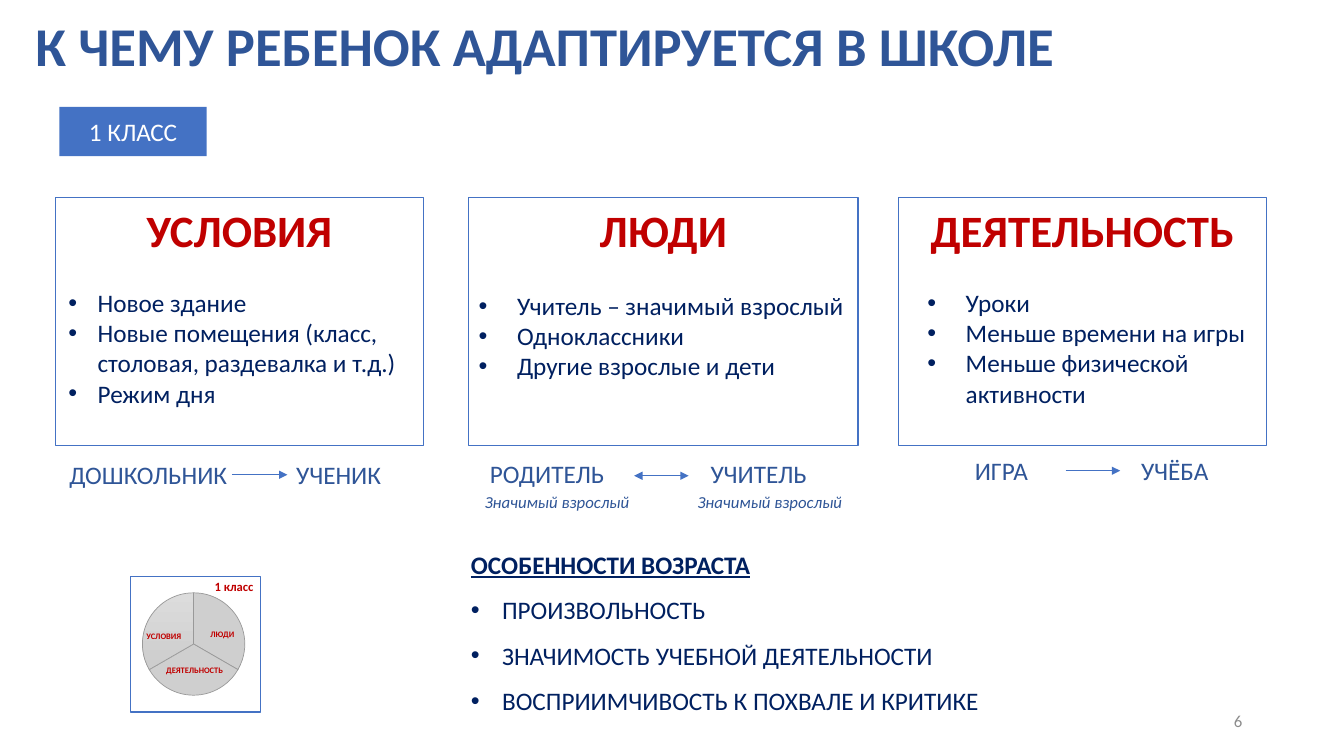
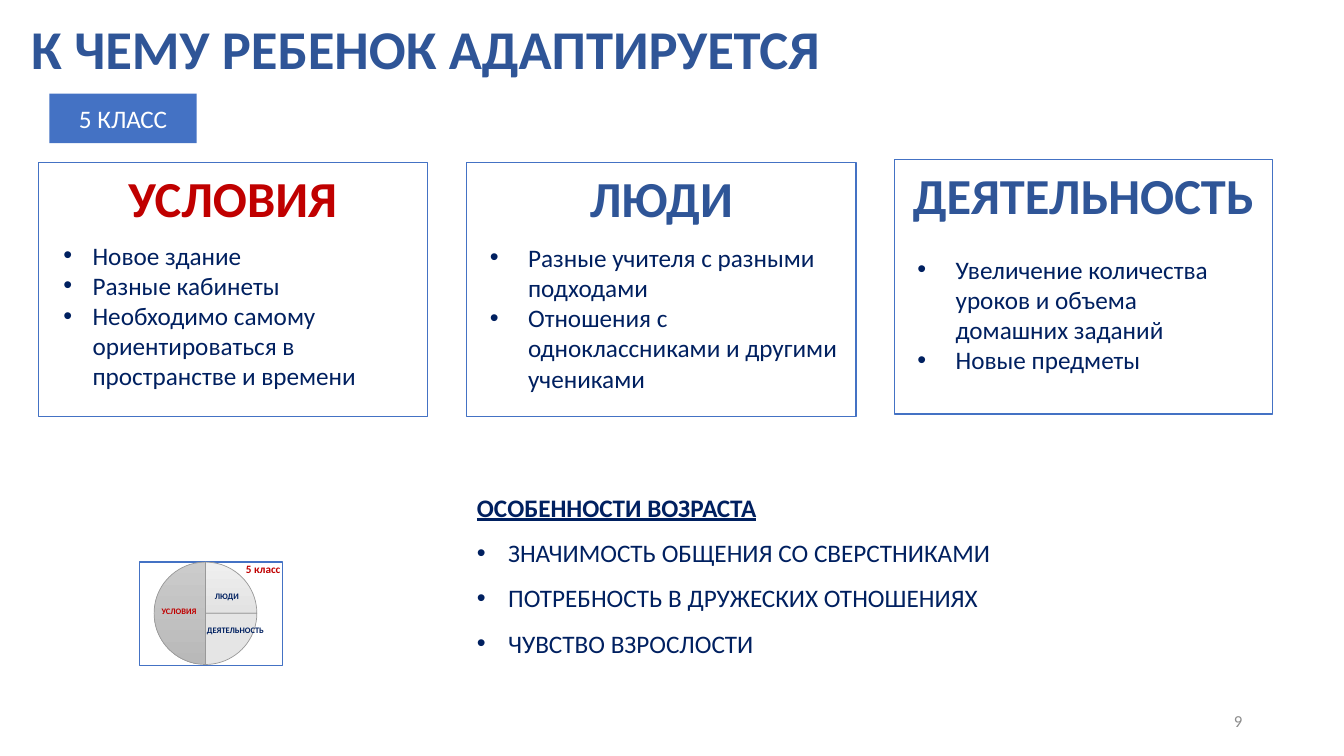
from lxml import etree
from pptx import Presentation
from pptx.chart.data import CategoryChartData
from pptx.dml.color import RGBColor
from pptx.enum.chart import XL_CHART_TYPE
from pptx.enum.shapes import MSO_CONNECTOR, MSO_SHAPE
from pptx.enum.text import MSO_ANCHOR, MSO_AUTO_SIZE, PP_ALIGN
from pptx.oxml import parse_xml
from pptx.oxml.ns import nsdecls, qn
from pptx.util import Inches, Pt

LEFT, CENTER, RIGHT = PP_ALIGN.LEFT, PP_ALIGN.CENTER, PP_ALIGN.RIGHT
TOP, MIDDLE = MSO_ANCHOR.TOP, MSO_ANCHOR.MIDDLE
RECT = MSO_SHAPE.RECTANGLE

FONT = "Calibri"
WHITE = RGBColor(0xFF, 0xFF, 0xFF)
BLACK = RGBColor(0x00, 0x00, 0x00)
BLUE = RGBColor(0x44, 0x72, 0xC4)
DARK_BLUE = RGBColor(0x2F, 0x55, 0x97)
NAVY = RGBColor(0x00, 0x20, 0x60)
RED = RGBColor(0xC0, 0x00, 0x00)
GRAY = RGBColor(0x8C, 0x8C, 0x8C)
SLICE_LINE = RGBColor(0x99, 0x99, 0x99)

# Boxes: left, top, width, height. Slices: colours at the top and the bottom.
# Labels: text, box, size, colour, alignment, bold, italic.
SLIDES = [
    {
        "title": ("К ЧЕМУ РЕБЕНОК АДАПТИРУЕТСЯ В ШКОЛЕ", (0.25, 0.14, 11.5, 0.7)),
        "grade": ("1 КЛАСС", 0.59, 1.06),
        "heading_size": 32,
        "panels": [
            ("УСЛОВИЯ", RED, (0.55, 1.96, 3.65, 2.46), (0.58, 2.8, 3.6, 1.62), 0.29,
             ["Новое здание",
              "Новые помещения (класс, столовая, раздевалка и т.д.)",
              "Режим дня"]),
            ("ЛЮДИ", RED, (4.65, 1.96, 3.86, 2.46), (4.65, 2.83, 3.86, 1.01), 0.38,
             ["Учитель – значимый взрослый", "Одноклассники",
              "Другие взрослые и дети"]),
            ("ДЕЯТЕЛЬНОСТЬ", RED, (8.91, 1.96, 3.65, 2.46), (9.1, 2.8, 3.45, 1.31), 0.38,
             ["Уроки", "Меньше времени на игры", "Меньше физической активности"]),
        ],
        "age": (4.57, 5.25, 7.65, 1.87),
        "age_items": ["ПРОИЗВОЛЬНОСТЬ", "ЗНАЧИМОСТЬ УЧЕБНОЙ ДЕЯТЕЛЬНОСТИ",
                      "ВОСПРИИМЧИВОСТЬ К ПОХВАЛЕ И КРИТИКЕ"],
        "pie": (1.29, 5.71, 1.3, 1.36),
        "plot": (0.09, 0, 0.79, 1),
        "values": (33, 33, 33),
        "slices": [("CFCFCF", "CFCFCF"), ("CFCFCF", "CFCFCF"), ("DCDCDC", "CDCDCD")],
        "arrows": [(2.3, 2.85, 4.71, False), (6.29, 6.83, 4.72, True),
                   (10.57, 11.11, 4.67, False)],
        "labels": [
            ("ДОШКОЛЬНИК", (0.59, 4.51, 1.9, 0.4), 18, DARK_BLUE, LEFT, False, False),
            ("УЧЕНИК", (2.84, 4.51, 1.4, 0.4), 18, DARK_BLUE, LEFT, False, False),
            ("РОДИТЕЛЬ", (4.76, 4.5, 1.6, 0.4), 18, DARK_BLUE, LEFT, False, False),
            ("УЧИТЕЛЬ", (6.95, 4.5, 1.6, 0.4), 18, DARK_BLUE, LEFT, False, False),
            ("ИГРА", (9.57, 4.47, 1, 0.4), 18, DARK_BLUE, LEFT, False, False),
            ("УЧЁБА", (11.22, 4.47, 1.2, 0.4), 18, DARK_BLUE, LEFT, False, False),
            ("Значимый взрослый", (4.71, 4.83, 1.9, 0.3), 12, DARK_BLUE, LEFT, False, True),
            ("Значимый взрослый", (6.82, 4.83, 1.9, 0.3), 12, DARK_BLUE, LEFT, False, True),
            ("ЛЮДИ", (1.88, 6.19, 0.65, 0.2), 6, RED, CENTER, True, False),
            ("УСЛОВИЯ", (1.11, 6.21, 1.03, 0.2), 6, RED, CENTER, True, False),
            ("ДЕЯТЕЛЬНОСТЬ", (1.28, 6.55, 1.3, 0.2), 6, RED, CENTER, True, False),
            ("1 класс", (2.03, 5.69, 0.69, 0.25), 9, RED, LEFT, True, False),
        ],
        "number": "6",
    },
    {
        "title": ("К ЧЕМУ РЕБЕНОК АДАПТИРУЕТСЯ", (0.21, 0.17, 11.91, 0.7)),
        "grade": ("5 КЛАСС", 0.49, 0.93),
        "heading_size": 36,
        "panels": [
            ("УСЛОВИЯ", RED, (0.38, 1.61, 3.86, 2.52), (0.53, 2.33, 3.6, 1.92), 0.29,
             ["Новое здание", "Разные кабинеты",
              "Необходимо самому ориентироваться в пространстве и времени"]),
            ("ЛЮДИ", DARK_BLUE, (4.63, 1.61, 3.86, 2.52), (4.76, 2.35, 3.86, 1.62), 0.38,
             ["Разные учителя с разными подходами",
              "Отношения с одноклассниками и другими учениками"]),
            ("ДЕЯТЕЛЬНОСТЬ", DARK_BLUE, (8.87, 1.58, 3.75, 2.53), (9, 2.47, 3.4, 1.31), 0.38,
             ["Увеличение количества уроков и объема домашних заданий",
              "Новые предметы"]),
        ],
        "age": (4.63, 4.68, 7.65, 1.87),
        "age_items": ["ЗНАЧИМОСТЬ ОБЩЕНИЯ СО СВЕРСТНИКАМИ",
                      "ПОТРЕБНОСТЬ В ДРУЖЕСКИХ ОТНОШЕНИЯХ", "ЧУВСТВО ВЗРОСЛОСТИ"],
        "pie": (1.38, 5.57, 1.43, 1.04),
        "plot": (0.09, 0, 0.74, 0.99),
        "values": (25, 25, 50),
        "slices": [("EFEFEF", "E3E3E3"), ("E5E5E5", "E5E5E5"), ("CBCBCB", "B9B9B9")],
        "arrows": [],
        "labels": [
            ("УСЛОВИЯ", (1.38, 5.96, 0.79, 0.2), 6, RED, CENTER, True, False),
            ("5 класс", (2.34, 5.53, 0.62, 0.24), 8, RED, LEFT, True, False),
            ("ДЕЯТЕЛЬНОСТЬ", (1.77, 6.15, 1.13, 0.2), 6, NAVY, CENTER, True, False),
            ("ЛЮДИ", (1.94, 5.82, 0.62, 0.2), 6, NAVY, CENTER, True, False),
        ],
        "number": "9",
    },
]


def add_text(p, text, size, color, align=LEFT, bold=False, italic=False):
    p.alignment = align
    r = p.add_run()
    r.text = text
    r.font.name, r.font.size = FONT, Pt(size)
    r.font.bold, r.font.italic = bold, italic
    r.font.color.rgb = color
    return r


def add_bullets(tf, items, indent, first=0):
    """Write bulleted items, starting at the paragraph with index first."""
    for i, item in enumerate(items, first):
        p = tf.paragraphs[0] if i == 0 else tf.add_paragraph()
        pPr = p._p.get_or_add_pPr()
        pPr.set("marL", str(Inches(indent)))
        pPr.set("indent", str(-Inches(indent)))
        etree.SubElement(pPr, qn("a:buFont"), typeface="Arial")
        etree.SubElement(pPr, qn("a:buChar"), char="•")
        p.space_before = Pt(0)
        add_text(p, item, 18, NAVY)


prs = Presentation()
prs.slide_width, prs.slide_height = Inches(13.33), Inches(7.5)

for page in SLIDES:
    s = prs.slides.add_slide(prs.slide_layouts[1])

    # Title
    text, box = page["title"]
    title = s.shapes.title
    title.left, title.top, title.width, title.height = map(Inches, box)
    tf = title.text_frame
    tf.auto_size = MSO_AUTO_SIZE.NONE
    tf.vertical_anchor = TOP
    tf.paragraphs[0].line_spacing = 0.9
    add_text(tf.paragraphs[0], text, 39, DARK_BLUE, bold=True)

    # Grade badge
    text, left, top = page["grade"]
    badge = s.shapes.add_shape(RECT, Inches(left), Inches(top), Inches(1.46), Inches(0.49))
    badge.shadow.inherit = False
    badge.fill.solid()
    badge.fill.fore_color.rgb = BLUE
    badge.line.fill.background()
    badge.text_frame.vertical_anchor = MIDDLE
    add_text(badge.text_frame.paragraphs[0], text, 18, WHITE, CENTER)

    # Three panels with lists
    for heading, color, box, list_box, indent, items in page["panels"]:
        panel = s.shapes.add_shape(RECT, *map(Inches, box))
        panel.shadow.inherit = False
        panel.fill.solid()
        panel.fill.fore_color.rgb = WHITE
        panel.line.color.rgb = BLUE
        panel.line.width = Pt(1)
        panel.text_frame.vertical_anchor = TOP
        add_text(panel.text_frame.paragraphs[0], heading, page["heading_size"],
                 color, CENTER, bold=True)
        tf = s.shapes.add_textbox(*map(Inches, list_box)).text_frame
        tf.word_wrap = True
        add_bullets(tf, items, indent)

    # Age features
    body = s.placeholders[1]
    body.left, body.top, body.width, body.height = map(Inches, page["age"])
    tf = body.text_frame
    tf.auto_size = MSO_AUTO_SIZE.NONE
    p = tf.paragraphs[0]
    pPr = p._p.get_or_add_pPr()
    pPr.set("marL", "0")
    pPr.set("indent", "0")
    etree.SubElement(pPr, qn("a:buNone"))
    p.space_before = Pt(0)
    add_text(p, "ОСОБЕННОСТИ ВОЗРАСТА", 18, NAVY, bold=True).font.underline = True
    add_bullets(tf, page["age_items"], 0.31, first=1)
    for p in tf.paragraphs:
        p.line_spacing = 1.5

    # Pie chart
    data = CategoryChartData()
    data.categories = ["1", "2", "3"]
    data.add_series("Series 1", page["values"])
    chart = s.shapes.add_chart(XL_CHART_TYPE.PIE, *map(Inches, page["pie"]), data).chart
    chart.has_title = chart.has_legend = False
    chart.font.name, chart.font.size = FONT, Pt(10)
    chart.font.color.rgb = BLACK
    chart.plots[0].vary_by_categories = False
    for i, (upper, lower) in enumerate(page["slices"]):
        fmt = chart.plots[0].series[0].points[i].format
        if upper == lower:
            fmt.fill.solid()
            fmt.fill.fore_color.rgb = RGBColor.from_string(upper)
        else:
            fmt.fill.gradient()
            fmt.fill.gradient_angle = 270
            for stop, shade in zip(fmt.fill.gradient_stops, (upper, lower)):
                stop.color.rgb = RGBColor.from_string(shade)
        fmt.line.color.rgb = SLICE_LINE
        fmt.line.width = Pt(0.5)
    c_chart = chart.element.find(qn("c:chart"))
    c_chart.addprevious(parse_xml(f'<c:roundedCorners {nsdecls("c")} val="0"/>'))
    c_chart.addnext(parse_xml(
        f'<c:spPr {nsdecls("c", "a")}><a:solidFill><a:srgbClr val="{WHITE}"/></a:solidFill>'
        f'<a:ln w="{Pt(1)}"><a:solidFill><a:srgbClr val="{BLUE}"/></a:solidFill></a:ln></c:spPr>'))
    plot_area = c_chart.find(qn("c:plotArea"))
    for layout in plot_area.findall(qn("c:layout")):
        plot_area.remove(layout)
    layout = etree.Element(qn("c:layout"))
    manual = etree.SubElement(layout, qn("c:manualLayout"))
    settings = [("layoutTarget", "inner"), ("xMode", "edge"), ("yMode", "edge")]
    for tag, value in settings + list(zip("xywh", page["plot"])):
        etree.SubElement(manual, qn(f"c:{tag}"), val=str(value))
    plot_area.insert(0, layout)

    # Arrows between roles
    for start, end, y, both_ways in page["arrows"]:
        arrow = s.shapes.add_connector(MSO_CONNECTOR.STRAIGHT, Inches(start), Inches(y),
                                       Inches(end), Inches(y))
        arrow.line.color.rgb = BLUE
        arrow.line.width = Pt(0.5)
        ln = arrow.line._get_or_add_ln()
        if both_ways:
            etree.SubElement(ln, qn("a:headEnd"), type="triangle")
        etree.SubElement(ln, qn("a:tailEnd"), type="triangle")
        etree.SubElement(arrow._element.spPr, qn("a:effectLst"))

    # Captions and slide number
    number = (page["number"], (9.42, 6.95, 3, 0.4), 12, GRAY, RIGHT, False, False)
    for text, box, *style in page["labels"] + [number]:
        tf = s.shapes.add_textbox(*map(Inches, box)).text_frame
        tf.word_wrap = True
        tf.vertical_anchor = MIDDLE if style[2] == RIGHT else TOP
        add_text(tf.paragraphs[0], text, *style)

prs.save("out.pptx")
